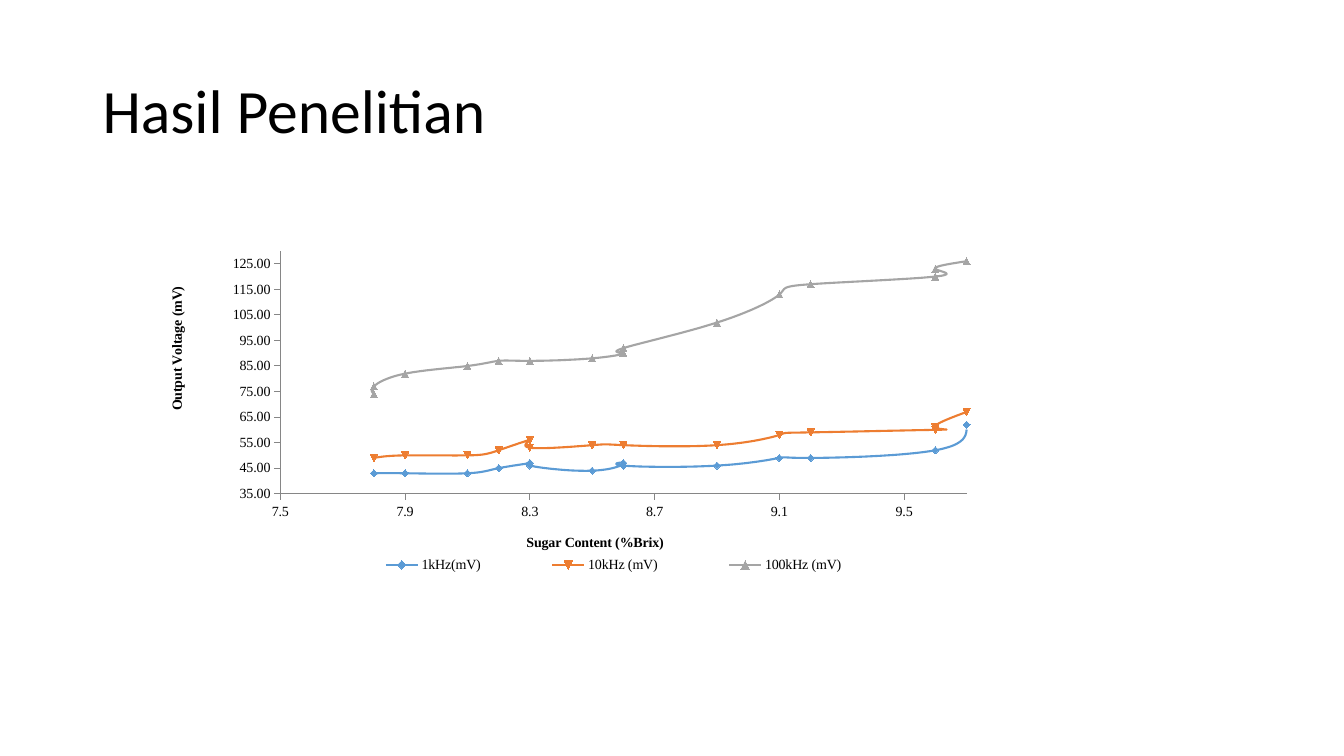
from dataclasses import dataclass

from lxml import etree
from pptx import Presentation
from pptx.chart.data import XyChartData
from pptx.dml.color import RGBColor
from pptx.enum.chart import (XL_AXIS_CROSSES as Cross, XL_CHART_TYPE as Kind,
                             XL_LEGEND_POSITION as Place,
                             XL_MARKER_STYLE as Mark, XL_TICK_MARK as Tick)
from pptx.enum.text import MSO_ANCHOR as Anchor, PP_ALIGN as Align
from pptx.oxml.ns import qn
from pptx.util import Cm, Pt

SERIF = "Times New Roman"
BLACK = "000000"
GREY = "868686"


@dataclass
class Curve:
    name: str
    color: str
    mark: Mark
    volts: list[int]


@dataclass
class Scale:
    title: str
    low: float
    high: float
    step: float
    digits: str
    spot: dict[str, float]


BRIX = [7.8, 7.8, 7.9, 8.1, 8.2, 8.3, 8.3, 8.5, 8.6, 8.6,
        8.9, 8.9, 9.1, 9.2, 9.6, 9.6, 9.7]
CURVES = [
    Curve("1kHz(mV)", "5B9BD5", Mark.DIAMOND,
          [43, 43, 43, 43, 45, 47, 46, 44, 47, 46, 46, 46, 49, 49, 52, 52, 62]),
    Curve("10kHz (mV)", "ED7D31", Mark.AUTOMATIC,
          [49, 49, 50, 50, 52, 56, 53, 54, 54, 54, 54, 54, 58, 59, 60, 61, 67]),
    Curve("100kHz (mV)", "A5A5A5", Mark.TRIANGLE,
          [74, 77, 82, 85, 87, 87, 87, 88, 90, 92, 102, 102, 113, 117, 120, 123, 126]),
]
SUGAR = Scale("Sugar Content (%Brix)", 7.5, 9.7, 0.4, "0.0", {"x": 0.45, "y": 0.84})
VOLTAGE = Scale("Output Voltage (mV)", 35, 130, 10, "0.00", {"x": 0.03, "y": 0.13})


def paint(item, color: str) -> None:
    """Give a font or fill its solid colour."""
    if hasattr(item, "solid"):
        item.solid()
        item.fore_color.rgb = RGBColor.from_string(color)
    else:
        item.color.rgb = RGBColor.from_string(color)


def style(font, name: str, size: float, bold: bool = False) -> None:
    font.name, font.size, font.bold = name, Pt(size), bold
    paint(font, BLACK)


def lay(node, spot: dict[str, float], inner: bool = False) -> None:
    """Place a chart part by fractions of the chart's size."""
    for old in node.findall(qn("c:layout")):
        node.remove(old)
    box = etree.Element(qn("c:layout"))
    hand = etree.SubElement(box, qn("c:manualLayout"))
    if inner:
        etree.SubElement(hand, qn("c:layoutTarget")).set("val", "inner")
    for key in ("x", "y"):
        etree.SubElement(hand, qn(f"c:{key}Mode")).set("val", "edge")
    for key, part in spot.items():
        etree.SubElement(hand, qn(f"c:{key}")).set("val", str(part))
    over = node.find(qn("c:overlay"))
    if over is None:
        node.insert(0, box)
    else:
        over.addprevious(box)


def set_axis(axis, scale: Scale) -> None:
    axis.minimum_scale, axis.maximum_scale = scale.low, scale.high
    axis.major_unit = scale.step
    axis.has_major_gridlines = False
    axis.major_tick_mark, axis.minor_tick_mark = Tick.OUTSIDE, Tick.NONE
    axis.crosses = Cross.MINIMUM
    labels = axis.tick_labels
    labels.number_format, labels.number_format_is_linked = scale.digits, False
    style(labels.font, SERIF, 10)
    paint(axis.format.line.fill, GREY)
    axis.format.line.width = Pt(0.75)
    run = axis.axis_title.text_frame.paragraphs[0].add_run()
    run.text = scale.title
    style(run.font, SERIF, 10, True)
    lay(axis.axis_title._element, scale.spot)


def set_curve(series, curve: Curve) -> None:
    paint(series.format.line.fill, curve.color)
    series.format.line.width = Pt(1.5)
    mark = series.marker
    mark.style, mark.size = curve.mark, 5
    paint(mark.format.fill, curve.color)
    paint(mark.format.line.fill, curve.color)
    node = series._element
    smooth = node.find(qn("c:smooth"))
    if smooth is None:
        smooth = etree.SubElement(node, qn("c:smooth"))
    smooth.set("val", "1")


def add_title(slide, text: str) -> None:
    title = slide.shapes.title
    title.left, title.top = Cm(2.33), Cm(1.01)
    title.width, title.height = Cm(29.21), Cm(3.68)
    frame = title.text_frame
    frame.word_wrap = True
    frame.vertical_anchor = Anchor.MIDDLE
    para = frame.paragraphs[0]
    para.alignment, para.line_spacing = Align.LEFT, 0.9
    run = para.add_run()
    run.text = text
    style(run.font, "Calibri", 44)


def add_graph(slide) -> None:
    data = XyChartData()
    for curve in CURVES:
        series = data.add_series(curve.name)
        for brix, volt in zip(BRIX, curve.volts):
            series.add_data_point(brix, volt)
    chart = slide.shapes.add_chart(Kind.XY_SCATTER_SMOOTH, Cm(3.51), Cm(6.02),
                                   Cm(21.54), Cm(8.74), data).chart
    style(chart.font, SERIF, 10)
    chart.has_title = False
    plot = chart.plots[0]
    plot.vary_by_categories = False
    for series, curve in zip(plot.series, CURVES):
        set_curve(series, curve)

    # Axes and plot area
    set_axis(chart.category_axis, SUGAR)
    set_axis(chart.value_axis, VOLTAGE)
    area = chart._chartSpace.find(".//" + qn("c:plotArea"))
    lay(area, {"x": 0.165, "y": 0.035, "w": 0.803, "h": 0.7}, True)

    # Legend
    chart.has_legend = True
    legend = chart.legend
    legend.position, legend.include_in_layout = Place.BOTTOM, False
    style(legend.font, SERIF, 10)
    lay(legend._element, {"x": 0.21, "y": 0.9, "w": 0.69, "h": 0.08})


def main() -> None:
    deck = Presentation()
    deck.slide_width, deck.slide_height = Cm(33.87), Cm(19.05)
    slide = deck.slides.add_slide(deck.slide_layouts[5])
    add_title(slide, "Hasil Penelitian")
    add_graph(slide)
    deck.save("out.pptx")


if __name__ == "__main__":
    main()
